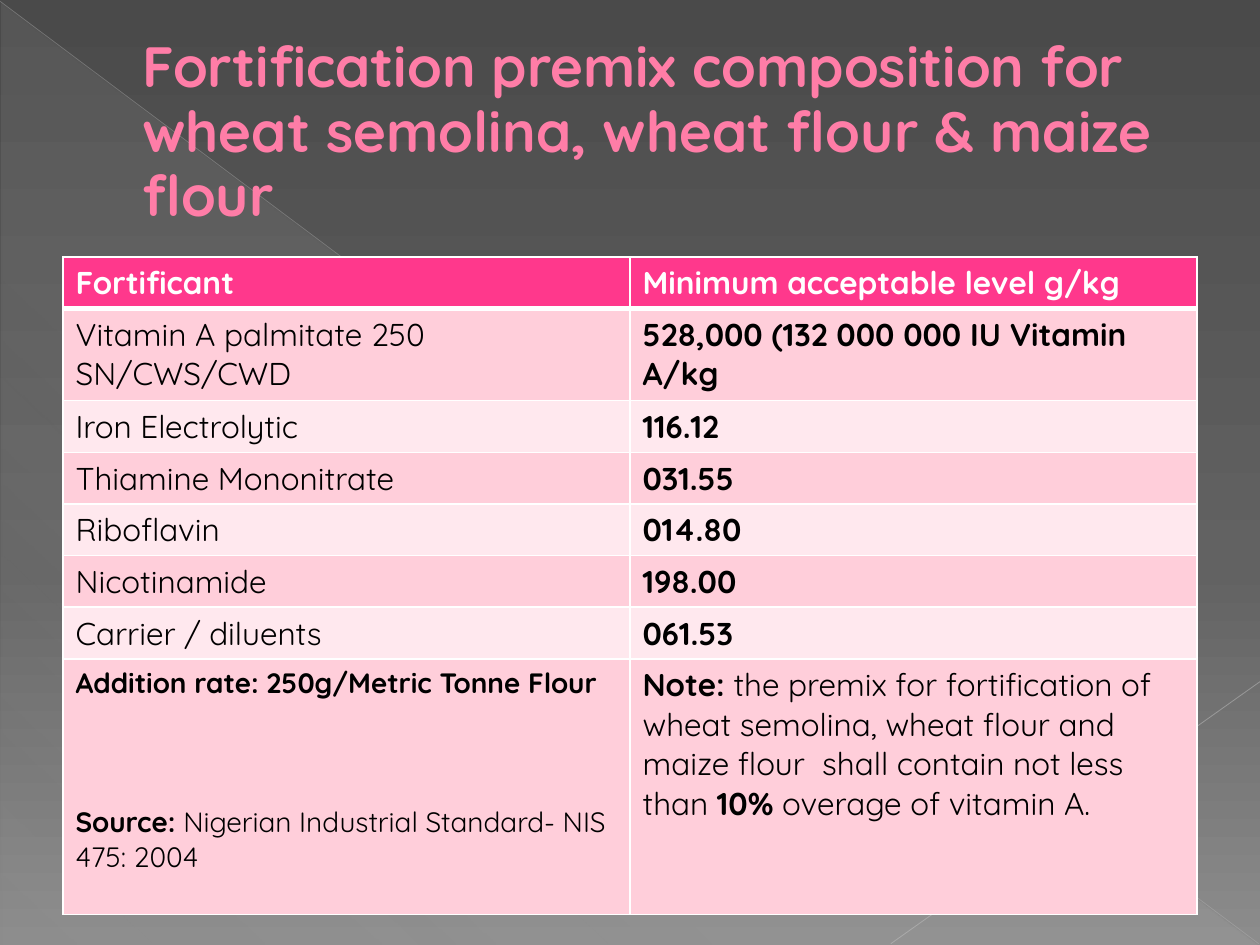
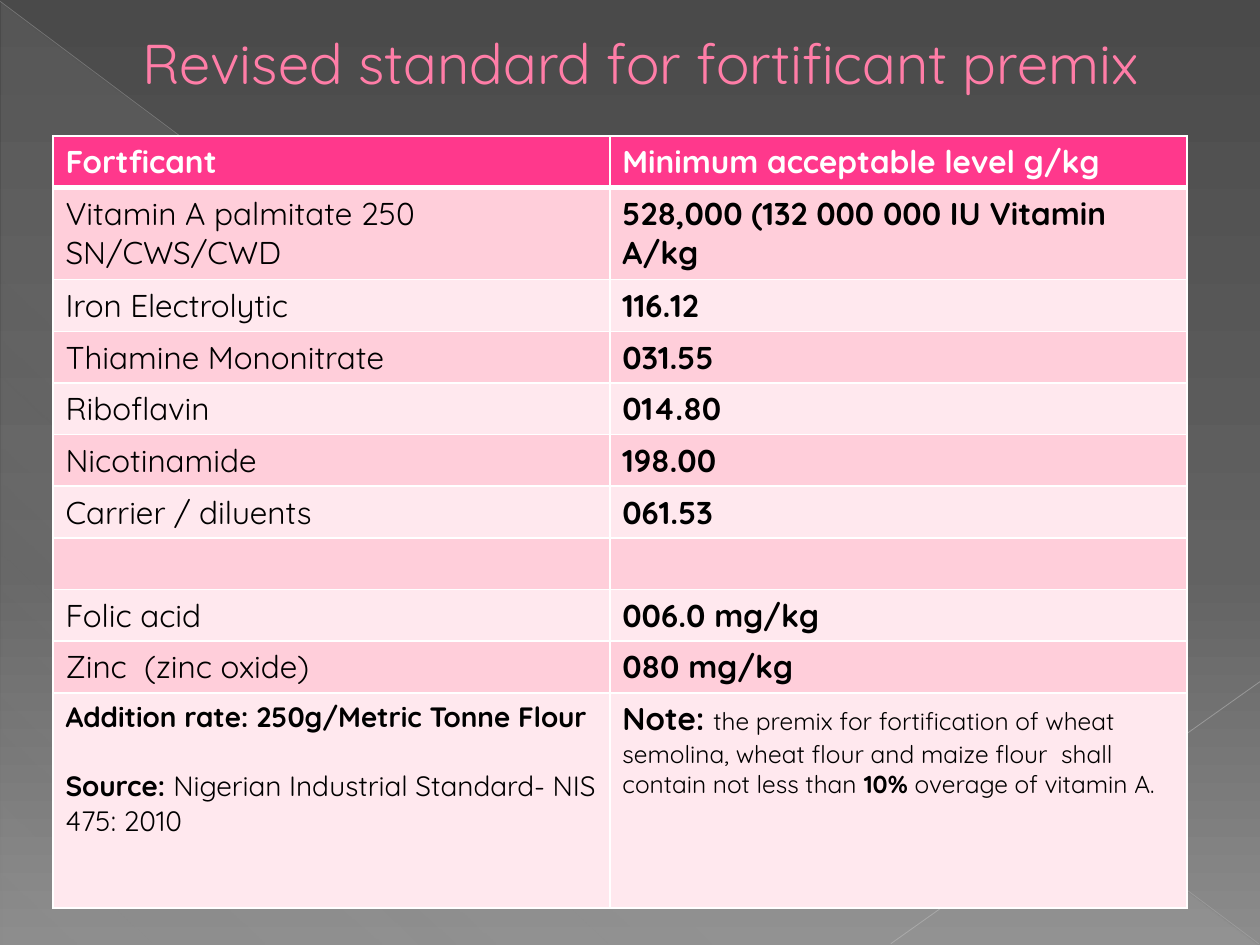
from lxml.etree import SubElement
from pptx import Presentation
from pptx.dml.color import RGBColor
from pptx.enum.shapes import MSO_CONNECTOR, MSO_SHAPE
from pptx.enum.text import MSO_ANCHOR
from pptx.oxml.ns import qn
from pptx.util import Inches, Pt

# Shared style
FONT = "Quicksand"
TITLE_COLOR, TITLE_OUTLINE = "FF7DA7", "B12761"
HEADER_FILL, BAND_FILLS = "FF388C", ("FFCEDA", "FFE8EE")
WHITE, BLACK = "FFFFFF", "000000"
BACKGROUND_STOPS = [(0, "4A4A4A", 100), (60, "626262", 100), (100, "8C8C8C", 100)]
TRIANGLE_STOPS = [(0, "D2D2D2", 10), (70, "D2D2D2", 8), (100, "D2D2D2", 1)]
# start, end, colour, width in points, opacity in percent
BACKDROP_LINES = [
    ((0, 0.01), (9.99, 7.49), "BFBFBF", 0.39, 35),
    ((10, 5.41), (7.07, 7.49), "C6C6C6", 0.47, 45),
]
ROW_HEIGHT, TALL_ROW_HEIGHT = 0.41, 0.73

# Content: a cell is a list of paragraphs, a paragraph a list of (text, size, bold)
LEVEL_HEADING = "Minimum acceptable level g/kg"
PREMIX = [
    ("Vitamin A palmitate 250 SN/CWS/CWD", "528,000 (132 000 000 IU Vitamin A/kg"),
    ("Iron Electrolytic", "116.12"),
    ("Thiamine Mononitrate", "031.55"),
    ("Riboflavin", "014.80"),
    ("Nicotinamide", "198.00"),
    ("Carrier / diluents", "061.53"),
]
ADDED_NUTRIENTS = [
    ("", ""),
    ("Folic acid", "006.0 mg/kg"),
    ("Zinc  (zinc oxide)", "080 mg/kg"),
]


def source_cell(year):
    return [
        [("Addition rate: 250g/Metric Tonne Flour", 16, True)],
        [("Source: ", 16, True),
         (f"Nigerian Industrial Standard- NIS 475: {year}", 16, False)],
    ]


def note_cell(size):
    return [[
        ("Note: ", 18, True),
        ("the premix for fortification of wheat semolina, wheat flour and "
         "maize flour  shall contain not less than ", size, False),
        ("10%", size, True),
        (" overage of vitamin A.", size, False),
    ]]


SLIDES = [
    {
        "title": "Fortification premix composition for wheat semolina, "
                 "wheat flour & maize flour",
        "title_top": 0.29, "title_size": 32.4, "title_bold": True,
        "table_at": (0.5, 2.04), "columns": (4.5, 4.5),
        "heading": "Fortificant", "rows": PREMIX,
        "footer": (source_cell(2004), note_cell(18)),
        "footer_height": 2.03, "source_gap": 60,
    },
    {
        "title": "Revised standard for fortificant premix",
        "title_top": -0.25, "title_size": 32, "title_bold": False,
        "table_at": (0.42, 1.08), "columns": (4.42, 4.58),
        "heading": "Fortficant", "rows": PREMIX + ADDED_NUTRIENTS,
        "footer": (source_cell(2010), note_cell(14)),
        "footer_height": 1.71, "source_gap": 20,
    },
]


def color(value):
    return RGBColor.from_string(value)


def add_color(parent, value, opacity=100):
    element = SubElement(parent, qn("a:srgbClr"), val=value)
    if opacity < 100:
        SubElement(element, qn("a:alpha"), val=str(opacity * 1000))


def add_line_fill(line, value, opacity=100):
    add_color(SubElement(line, qn("a:solidFill")), value, opacity)


def insert_line(properties, index, tag, width, value):
    line = SubElement(properties, qn(tag), w=str(Pt(width)))
    add_line_fill(line, value)
    properties.insert(index, line)


def set_gradient(fill, owner, stops, angle):
    fill.gradient()
    gradient = owner.find(".//" + qn("a:gradFill"))
    for child in list(gradient):
        gradient.remove(child)
    stop_list = SubElement(gradient, qn("a:gsLst"))
    for position, value, opacity in stops:
        stop = SubElement(stop_list, qn("a:gs"), pos=str(position * 1000))
        add_color(stop, value, opacity)
    SubElement(gradient, qn("a:lin"), ang=str(angle * 60000), scaled="0")


def style_run(run, size, bold, value):
    run.font.name = FONT
    run.font.size = Pt(size)
    run.font.bold = bold
    run.font.color.rgb = color(value)


def add_backdrop(slide):
    set_gradient(slide.background.fill, slide.element, BACKGROUND_STOPS, 90)
    triangle = slide.shapes.add_shape(
        MSO_SHAPE.RIGHT_TRIANGLE, Inches(0.01), Inches(0.02), Inches(9.98), Inches(7.48))
    triangle.shadow.inherit = False
    triangle.line.fill.background()
    set_gradient(triangle.fill, triangle.element.spPr, TRIANGLE_STOPS, 133)
    for start, end, value, width, opacity in BACKDROP_LINES:
        points = [Inches(number) for number in start + end]
        connector = slide.shapes.add_connector(MSO_CONNECTOR.STRAIGHT, *points)
        connector.line.width = Pt(width)
        add_line_fill(connector.element.spPr.find(qn("a:ln")), value, opacity)
        SubElement(connector.element.spPr, qn("a:effectLst"))


def add_title(slide, content):
    box = slide.shapes.add_textbox(
        Inches(0.5), Inches(content["title_top"]), Inches(9), Inches(1.53))
    frame = box.text_frame
    frame.word_wrap = True
    frame.vertical_anchor = MSO_ANCHOR.MIDDLE
    frame.text = content["title"]
    paragraph = frame.paragraphs[0]
    paragraph.line_spacing = 0.95
    paragraph._p.get_or_add_pPr().set("marL", str(Inches(0.53)))
    run = paragraph.runs[0]
    style_run(run, content["title_size"], content["title_bold"], TITLE_COLOR)
    insert_line(run._r.get_or_add_rPr(), 0, "a:ln", 0.5, TITLE_OUTLINE)


def set_borders(cell, top, bottom):
    properties = cell._tc.get_or_add_tcPr()
    widths = {"a:lnL": 1, "a:lnR": 1, "a:lnT": top, "a:lnB": bottom}
    for index, (tag, width) in enumerate(widths.items()):
        insert_line(properties, index, tag, width, WHITE)


def fill_cell(cell, paragraphs, text_color, gap):
    frame = cell.text_frame
    for index, parts in enumerate(paragraphs):
        paragraph = frame.add_paragraph() if index else frame.paragraphs[0]
        if index:
            paragraph.space_before = Pt(gap)
        for text, size, bold in parts:
            if text:
                run = paragraph.add_run()
                run.text = text
                style_run(run, size, bold, text_color)


def add_premix_table(slide, content):
    # Header, plain rows and footer in one form
    rows = [[[[(content["heading"], 18, True)]], [[(LEVEL_HEADING, 18, True)]]]]
    rows += [[[[(name, 18, False)]], [[(level, 18, True)]]]
             for name, level in content["rows"]]
    rows.append(content["footer"])
    heights = [ROW_HEIGHT] * len(rows)
    heights[1] = TALL_ROW_HEIGHT
    heights[-1] = content["footer_height"]

    left, top = content["table_at"]
    table = slide.shapes.add_table(
        len(rows), 2, Inches(left), Inches(top),
        Inches(sum(content["columns"])), Inches(sum(heights))).table
    for column, width in zip(table.columns, content["columns"]):
        column.width = Inches(width)
    for row_index, (cells, height) in enumerate(zip(rows, heights)):
        table.rows[row_index].height = Inches(height)
        is_header = row_index == 0
        fill = HEADER_FILL if is_header else BAND_FILLS[(row_index - 1) % 2]
        for column_index, paragraphs in enumerate(cells):
            cell = table.cell(row_index, column_index)
            cell.fill.solid()
            cell.fill.fore_color.rgb = color(fill)
            set_borders(cell, 3 if row_index == 1 else 1, 3 if is_header else 1)
            fill_cell(cell, paragraphs, WHITE if is_header else BLACK,
                      content["source_gap"])


def main():
    presentation = Presentation()
    presentation.slide_width, presentation.slide_height = Inches(10), Inches(7.5)
    for content in SLIDES:
        slide = presentation.slides.add_slide(presentation.slide_layouts[6])
        add_backdrop(slide)
        add_title(slide, content)
        add_premix_table(slide, content)
    presentation.save("out.pptx")


if __name__ == "__main__":
    main()
